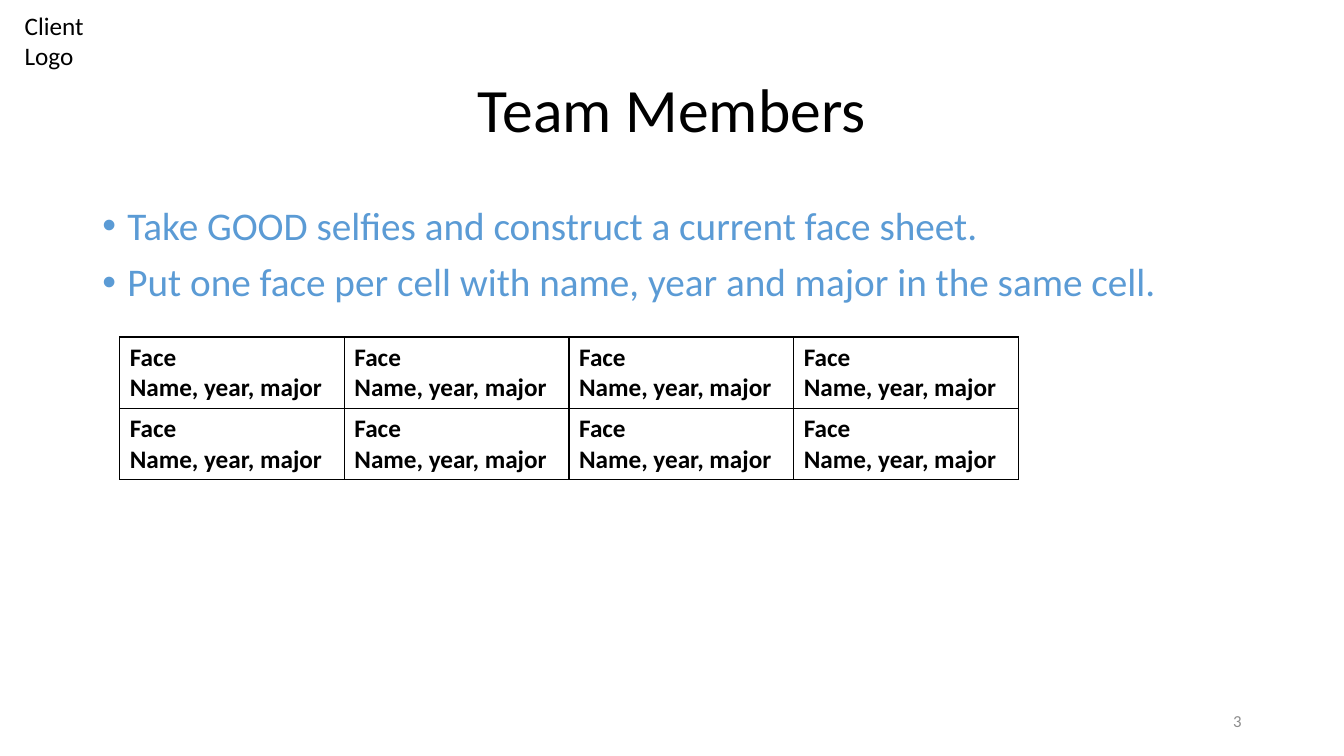
"""Build the Team Members slide with a face sheet table."""
from lxml import etree
from pptx import Presentation
from pptx.dml.color import RGBColor
from pptx.enum.text import MSO_ANCHOR, PP_ALIGN
from pptx.oxml.ns import qn
from pptx.util import Emu, Pt

PX = 9525
LEFT, CENTER, RIGHT = PP_ALIGN.LEFT, PP_ALIGN.CENTER, PP_ALIGN.RIGHT
TOP, MIDDLE = MSO_ANCHOR.TOP, MSO_ANCHOR.MIDDLE
BLACK, BLUE, GRAY = "000000", "5B9BD5", "8C8C8C"
COLUMNS, ROWS = 4, 2
COLUMN_WIDTH, ROW_HEIGHT = 214, 68


def style(paragraph, size, color, bold=False, align=LEFT):
    paragraph.alignment = align
    paragraph.font.name = "Calibri"
    paragraph.font.size = Pt(size)
    paragraph.font.bold = bold
    paragraph.font.color.rgb = RGBColor.from_string(color)


def add_text(left, top, width, height, text, size, color, align=LEFT, anchor=TOP):
    box = page.shapes.add_textbox(*(Emu(n * PX) for n in (left, top, width, height)))
    frame = box.text_frame
    frame.word_wrap = True
    frame.vertical_anchor = anchor
    frame.text = text
    for paragraph in frame.paragraphs:
        style(paragraph, size, color, align=align)
    return frame


deck = Presentation()
deck.slide_width, deck.slide_height = Emu(1280 * PX), Emu(720 * PX)
page = deck.slides.add_slide(deck.slide_layouts[6])

add_text(14, 5, 107, 68, "Client\vLogo", 18, BLACK)

title = add_text(88, 38, 1104, 139, "Team Members", 44, BLACK, CENTER, MIDDLE)
title.paragraphs[0].line_spacing = 0.9

instructions = add_text(
    88, 192, 1104, 457,
    "Take GOOD selfies and construct a current face sheet.\n"
    "Put one face per cell with name, year and major in the same cell.",
    28, BLUE)
for index, paragraph in enumerate(instructions.paragraphs):
    paragraph.line_spacing = 0.9
    if index:
        paragraph.space_before = Pt(10)
    properties = paragraph._p.get_or_add_pPr()
    properties.set("marL", str(24 * PX))
    properties.set("indent", str(-24 * PX))
    bullet_font = etree.Element(qn("a:buFont"), typeface="Arial")
    bullet = etree.Element(qn("a:buChar"), char="•")
    defaults = properties.find(qn("a:defRPr"))
    defaults.addprevious(bullet_font)
    defaults.addprevious(bullet)

face_sheet = page.shapes.add_table(
    ROWS, COLUMNS, Emu(114 * PX), Emu(321 * PX),
    Emu(COLUMNS * COLUMN_WIDTH * PX), Emu(ROWS * ROW_HEIGHT * PX)).table
face_sheet.first_row = False
face_sheet.horz_banding = False
for cell in face_sheet.iter_cells():
    cell.text = "Face\nName, year, major"
    for paragraph in cell.text_frame.paragraphs:
        style(paragraph, 18, BLACK, bold=True)
    properties = cell._tc.get_or_add_tcPr()
    for side in ("lnL", "lnR", "lnT", "lnB"):
        border = etree.SubElement(properties, qn(f"a:{side}"), w=str(Pt(1)))
        fill = etree.SubElement(border, qn("a:solidFill"))
        etree.SubElement(fill, qn("a:srgbClr"), val=BLACK)
    cell.fill.background()

add_text(904, 667, 288, 38, "3", 12, GRAY, RIGHT, MIDDLE)

deck.save("out.pptx")
